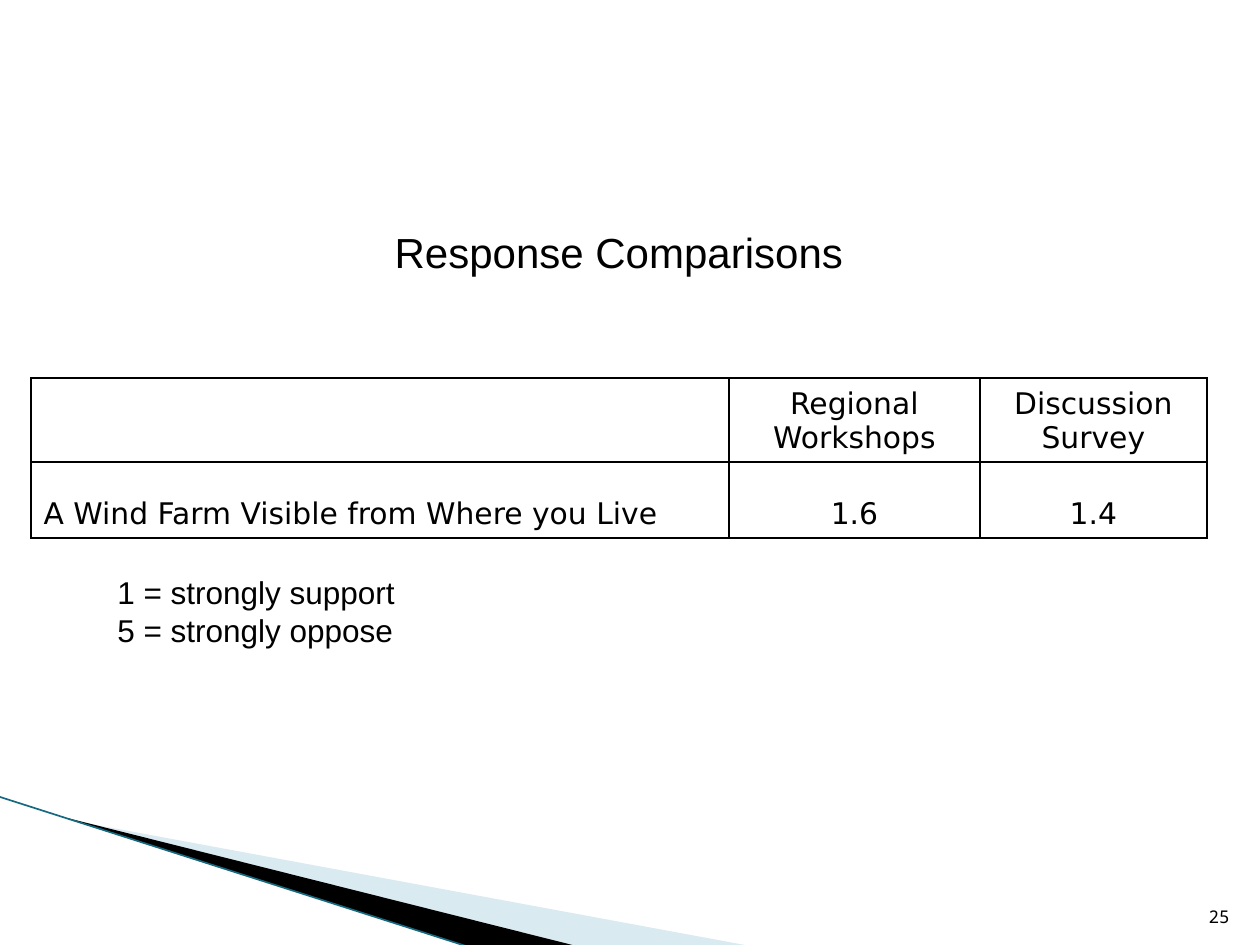
from lxml import etree
from pptx import Presentation
from pptx import util as u
from pptx.dml.color import RGBColor
from pptx.enum import shapes, text
from pptx.oxml import ns

SCALE = 914400 / 126
COLORS = {"black": "000000", "pale": "A0CBDC", "teal": "16697F"}


def px(value):
    return u.Emu(round(value * SCALE))


def rgb(name):
    return RGBColor.from_string(COLORS[name])


def write(frame, content, size=18, font="Arial", color="black",
          align=text.PP_ALIGN.LEFT, anchor=text.MSO_ANCHOR.TOP, wrap=True):
    frame.word_wrap = wrap
    frame.auto_size = text.MSO_AUTO_SIZE.NONE
    frame.vertical_anchor = anchor
    for index, line in enumerate(content.split("\n")):
        paragraph = frame.paragraphs[0] if index == 0 else frame.add_paragraph()
        paragraph.alignment = align
        run = paragraph.add_run()
        run.text = line
        run.font.size = u.Pt(size)
        run.font.name = font
        run.font.color.rgb = rgb(color)


def add_text(slide, box, content, **style):
    shape = slide.shapes.add_textbox(*map(px, box))
    write(shape.text_frame, content, **style)


def add_title(slide, box, content):
    title = slide.shapes.title
    title.left, title.top, title.width, title.height = map(px, box)
    write(title.text_frame, content, size=24, wrap=False)


def add_wedge(slide, origin, points, color, alpha=100):
    left, top = origin
    corners = [(left + x, top + y) for x, y in points]
    builder = slide.shapes.build_freeform(*corners[0], scale=SCALE)
    builder.add_line_segments(corners[1:], close=True)
    shape = builder.convert_to_shape()
    shape.shadow.inherit = False
    shape.fill.solid()
    shape.fill.fore_color.rgb = rgb(color)
    shape.line.fill.background()
    if alpha < 100:
        fill = shape.fill._xPr.find(".//" + ns.qn("a:srgbClr"))
        etree.SubElement(fill, ns.qn("a:alpha"), val=str(alpha * 1000))


def add_corner(slide, box):
    left, top, width, height = box
    add_wedge(slide, (left, top), [(69, 23), (750, 149), (575, 149), (69, 22)],
              "pale", alpha=40)
    add_wedge(slide, (left, top), [(67, 21), (576, 149), (469, 150), (68, 22)],
              "black")
    edge = slide.shapes.add_connector(
        shapes.MSO_CONNECTOR.STRAIGHT,
        *map(px, (left, top, left + width, top + height)))
    edge.line.color.rgb = rgb("teal")
    edge.line.width = u.Pt(0.95)
    etree.SubElement(edge._element.spPr, ns.qn("a:effectLst"))


def outline_cell(cell):
    properties = cell._tc.get_or_add_tcPr()
    for index, side in enumerate(("lnL", "lnR", "lnT", "lnB")):
        line = etree.Element(ns.qn("a:" + side), w=str(u.Pt(1)))
        fill = etree.SubElement(line, ns.qn("a:solidFill"))
        etree.SubElement(fill, ns.qn("a:srgbClr"), val=COLORS["black"])
        properties.insert(index, line)


def add_responses(slide, box, rows, widths, heights):
    table = slide.shapes.add_table(len(rows), len(widths), *map(px, box)).table
    table.first_row = table.horz_banding = False
    for column, width in zip(table.columns, widths):
        column.width = px(width)
    for row, height in zip(table.rows, heights):
        row.height = px(height)
    for row, values in zip(table.rows, rows):
        for index, (cell, value) in enumerate(zip(row.cells, values)):
            cell.fill.background()
            outline_cell(cell)
            if value:
                align = text.PP_ALIGN.CENTER if index else text.PP_ALIGN.LEFT
                write(cell.text_frame, value, size=17, font="DejaVu Sans", align=align)
            cell.vertical_anchor = text.MSO_ANCHOR.BOTTOM


def main():
    presentation = Presentation()
    presentation.slide_width, presentation.slide_height = px(1260), px(945)
    slide = presentation.slides.add_slide(presentation.slide_layouts[5])
    add_corner(slide, (0, 797, 469, 150))
    add_text(slide, (1192, 883, 50, 50), "25", size=10, font="Noto Sans Mono",
             align=text.PP_ALIGN.RIGHT, anchor=text.MSO_ANCHOR.BOTTOM)
    add_responses(
        slide, (31, 378, 1176, 160),
        [("", "Regional Workshops", "Discussion Survey"),
         ("A Wind Farm Visible from Where you Live", "1.6", "1.4")],
        widths=(698, 251, 227), heights=(84, 76))
    add_text(slide, (105, 567, 630, 88), "1 = strongly support\n5 = strongly oppose")
    add_title(slide, (382, 220, 496, 63), "Response Comparisons")
    presentation.save("out.pptx")


if __name__ == "__main__":
    main()
